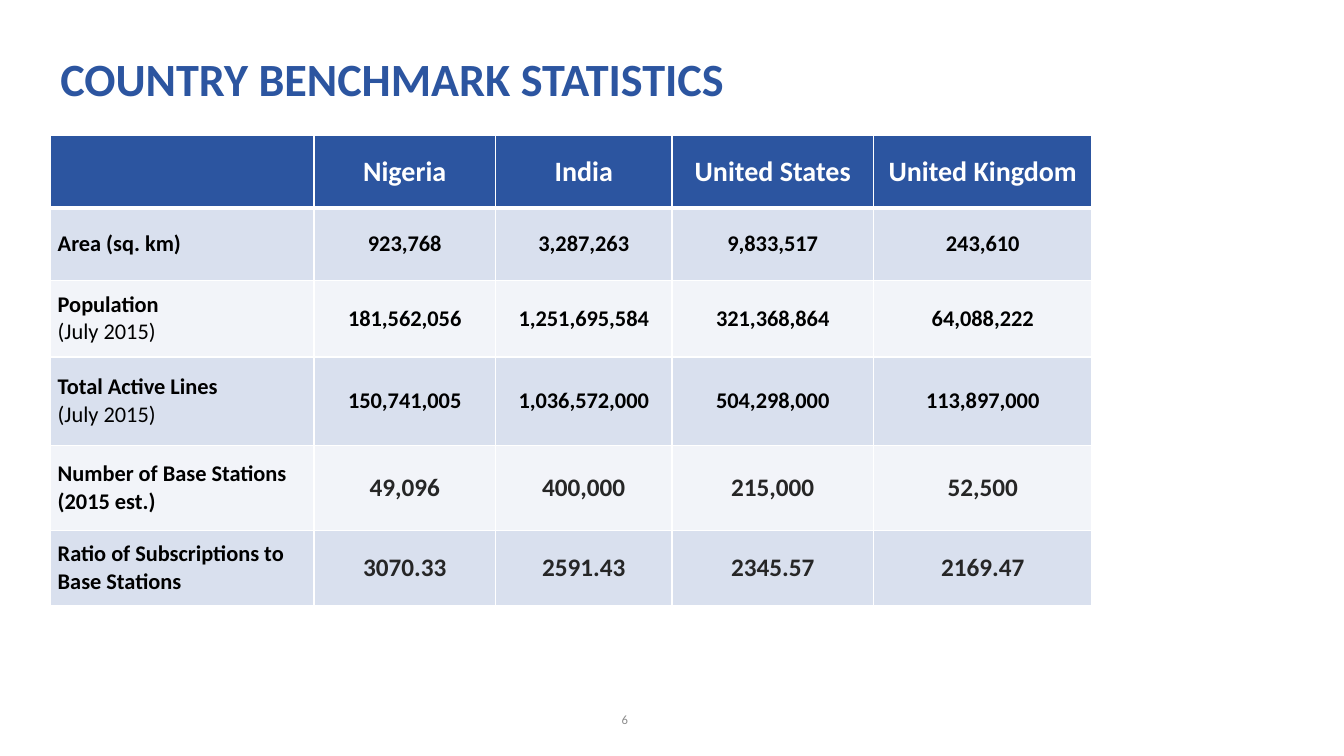
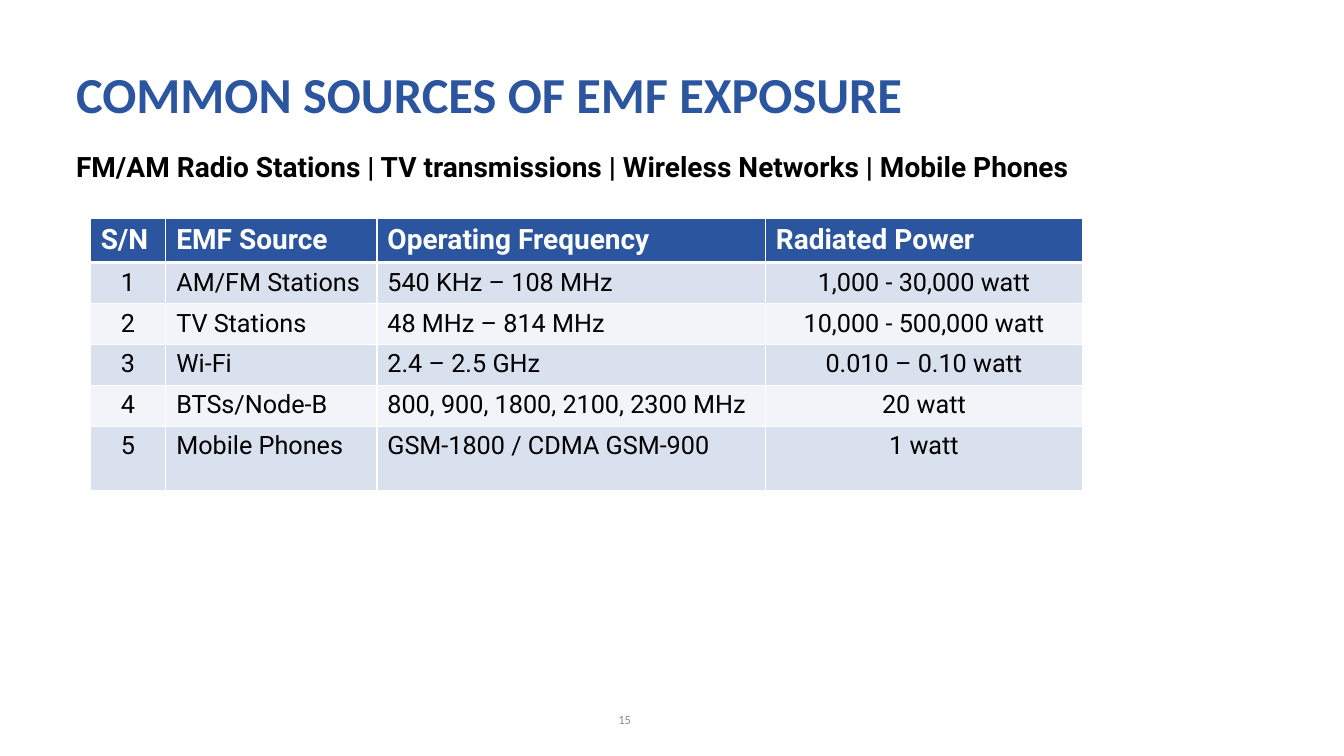
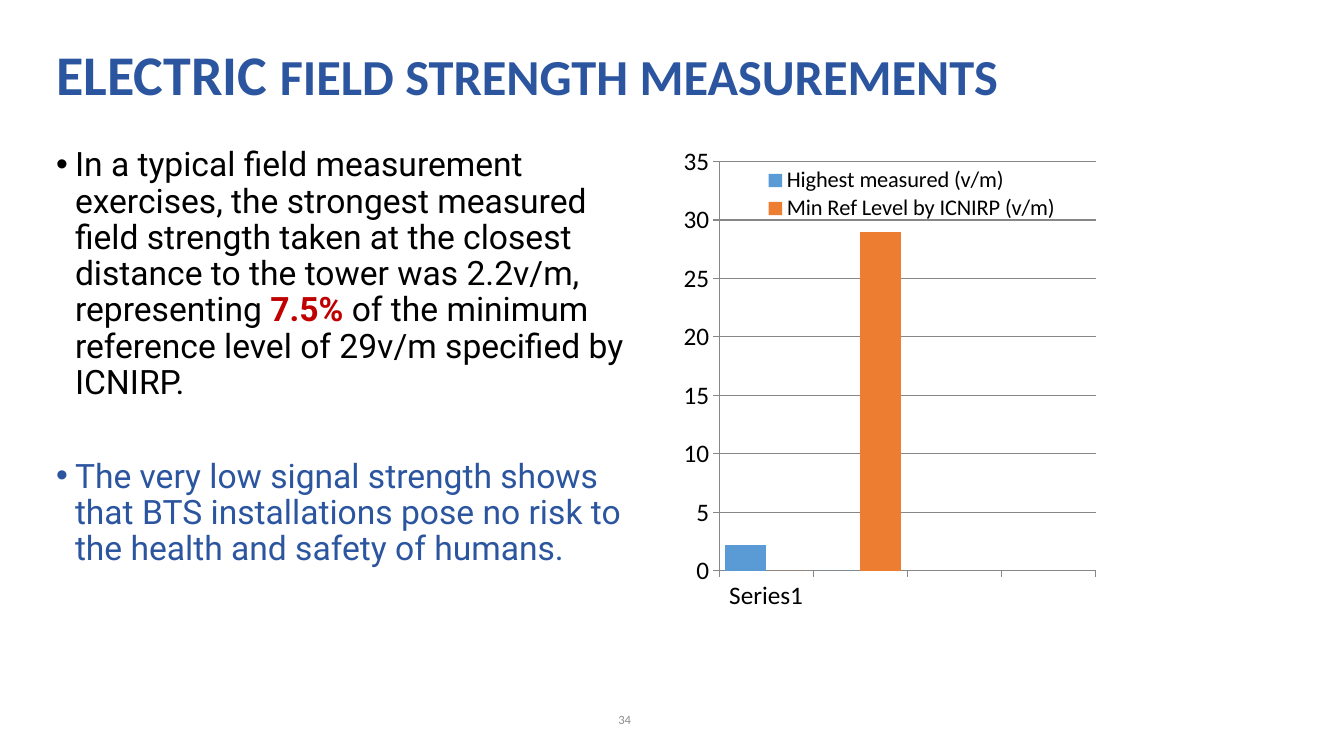
from dataclasses import dataclass
from typing import Any

from lxml import etree
from pptx import Presentation
from pptx import util as u
from pptx.chart.data import CategoryChartData
from pptx.dml.color import RGBColor
from pptx.enum import chart as chart_enum
from pptx.enum import text
from pptx.oxml import parse_xml
from pptx.oxml.ns import nsdecls, qn

EMU_PER_PX = 9525
COLOURS = {
    "blue": "2C55A0", "white": "FFFFFF", "black": "000000", "ink": "262626",
    "grey": "8C8C8C", "red": "C00000", "band": "D9E0EE", "pale": "F2F4F9",
    "grid": "878787", "measured": "5B9BD5", "limit": "ED7D31",
}
STYLES: dict[str, dict[str, Any]] = {
    "title": {"name": "Calibri", "size": 36, "bold": True, "color": "blue"},
    "number": {"name": "Calibri", "size": 9, "color": "grey"},
    "lead": {"name": "Roboto", "size": 20, "bold": True, "color": "black"},
    "body": {"name": "Roboto", "size": 24, "color": "black"},
    "country": {"name": "Calibri", "size": 20, "bold": True, "color": "white"},
    "fact": {"name": "Calibri", "size": 16, "bold": True, "color": "black"},
    "estimate": {"name": "Calibri", "size": 18, "bold": True, "color": "ink"},
    "heading": {"name": "Roboto", "size": 20, "bold": True, "color": "white"},
    "entry": {"name": "Roboto", "size": 18, "color": "black"},
    "axis": {"name": "Calibri", "size": 18, "color": "black"},
    "legend": {"name": "Calibri", "size": 16, "color": "black"},
}
STYLES["title_small"] = STYLES["title"] | {"size": 33}
STYLES["title_large"] = STYLES["title"] | {"size": 40}
STYLES["note"] = STYLES["fact"] | {"bold": False}
STYLES["stress"] = STYLES["body"] | {"bold": True, "color": "red"}
STYLES["finding"] = STYLES["body"] | {"color": "blue"}

LEFT, CENTRE = text.PP_ALIGN.LEFT, text.PP_ALIGN.CENTER
TOP, MIDDLE = text.MSO_ANCHOR.TOP, text.MSO_ANCHOR.MIDDLE


@dataclass(frozen=True)
class Area:
    left: int
    top: int
    width: int
    height: int

    def emu(self) -> tuple[int, ...]:
        return tuple(px(n) for n in (self.left, self.top, self.width, self.height))


@dataclass(frozen=True)
class Span:
    words: str
    style: str


@dataclass(frozen=True)
class Para:
    spans: tuple[Span, ...]
    align: Any = LEFT
    spacing: float = 1.0
    before: float = 0
    bullet: bool = False


@dataclass(frozen=True)
class Grid:
    left: int
    top: int
    columns: tuple[int, ...]
    rows: tuple[int, ...]
    centred: tuple[int, ...]
    margins: tuple[int, int]
    anchor: Any


NUMBER_AREA = Area(451, 666, 288, 38)
BULLET_INDENT = 18


def px(length: int) -> int:
    return u.Emu(length * EMU_PER_PX)


def colour(name: str) -> RGBColor:
    return RGBColor.from_string(COLOURS[name])


def set_font(font: Any, style: str) -> None:
    for key, value in STYLES[style].items():
        if key == "color":
            font.color.rgb = colour(value)
        else:
            setattr(font, key, u.Pt(value) if key == "size" else value)


def write(frame: Any, paras: list[Para]) -> None:
    for index, item in enumerate(paras):
        para = frame.paragraphs[0] if index == 0 else frame.add_paragraph()
        para.alignment = item.align
        para.line_spacing = item.spacing
        if item.before:
            para.space_before = u.Pt(item.before)
        if item.bullet:
            properties = para._p.get_or_add_pPr()
            properties.set("marL", str(px(BULLET_INDENT)))
            properties.set("indent", str(-px(BULLET_INDENT)))
            etree.SubElement(properties, qn("a:buFont"), typeface="Arial")
            etree.SubElement(properties, qn("a:buChar"), char="•")
        for span in item.spans:
            run = para.add_run()
            run.text = span.words
            set_font(run.font, span.style)


def add_text(page: Any, area: Area, paras: list[Para], anchor: Any = TOP) -> None:
    frame = page.shapes.add_textbox(*area.emu()).text_frame
    frame.word_wrap = True
    frame.vertical_anchor = anchor
    write(frame, paras)


def add_page(deck: Any, number: int, title_area: Area, *title: Span) -> Any:
    """Add a slide with the shared title and slide number."""
    page = deck.slides.add_slide(deck.slide_layouts[6])
    add_text(page, title_area, [Para(title, spacing=0.9)], MIDDLE)
    add_text(page, NUMBER_AREA, [Para((Span(str(number), "number"),), CENTRE)], MIDDLE)
    return page


def set_borders(cell: Any, widths: dict[str, int]) -> None:
    """Draw white cell borders; must run before the cell is filled."""
    properties = cell._tc.get_or_add_tcPr()
    for side, points in widths.items():
        line = etree.SubElement(properties, qn(f"a:ln{side}"), w=str(u.Pt(points)))
        fill = etree.SubElement(line, qn("a:solidFill"))
        etree.SubElement(fill, qn("a:srgbClr"), val=COLOURS["white"])


def add_grid(page: Any, grid: Grid, cells: list[list[list[Span]]]) -> None:
    """Add a banded table; each span of a cell is a paragraph."""
    area = Area(grid.left, grid.top, sum(grid.columns), sum(grid.rows))
    table = page.shapes.add_table(len(grid.rows), len(grid.columns), *area.emu()).table
    for column, width in zip(table.columns, grid.columns):
        column.width = px(width)
    for row, height in zip(table.rows, grid.rows):
        row.height = px(height)
    across, down = (px(margin) for margin in grid.margins)
    for r, row_cells in enumerate(cells):
        for c, spans in enumerate(row_cells):
            cell = table.cell(r, c)
            cell.margin_left = cell.margin_right = across
            cell.margin_top = cell.margin_bottom = down
            cell.vertical_anchor = grid.anchor
            set_borders(cell, {"L": 1, "R": 1, "T": 3 if r == 1 else 1, "B": 1 if r else 3})
            cell.fill.solid()
            cell.fill.fore_color.rgb = colour(("band" if r % 2 else "pale") if r else "blue")
            align = CENTRE if c in grid.centred and (r or grid.anchor == MIDDLE) else LEFT
            write(cell.text_frame, [Para((span,), align) for span in spans])


def set_layout(parent: Any, index: int, place: dict[str, float], inner: bool = False) -> None:
    """Place a chart part by fractions of the chart area."""
    for old in parent.findall(qn("c:layout")):
        parent.remove(old)
    target = '<c:layoutTarget val="inner"/>' if inner else ""
    modes = "".join(f'<c:{axis}Mode val="edge"/>' for axis in "xy")
    sizes = "".join(f'<c:{key} val="{value}"/>' for key, value in place.items())
    parent.insert(index, parse_xml(
        f"<c:layout {nsdecls('c')}><c:manualLayout>{target}{modes}{sizes}"
        "</c:manualLayout></c:layout>"))


def add_strength_chart(page: Any, area: Area) -> None:
    data = CategoryChartData()
    data.categories = ["Series1", "", "", ""]
    data.add_series("Highest measured (v/m)", (2.2, 0, None, None))
    data.add_series("Min Ref Level by ICNIRP (v/m)", (0, 29, None, None))
    kind = chart_enum.XL_CHART_TYPE.COLUMN_CLUSTERED
    chart = page.shapes.add_chart(kind, *area.emu(), data).chart
    set_font(chart.font, "axis")
    chart.has_title = False

    plot = chart.plots[0]
    plot.gap_width = 30
    plot.overlap = 0
    plot.vary_by_categories = False
    for series, name in zip(plot.series, ("measured", "limit")):
        series.format.fill.solid()
        series.format.fill.fore_color.rgb = colour(name)

    values = chart.value_axis
    values.minimum_scale, values.maximum_scale, values.major_unit = 0, 35, 5
    values.has_major_gridlines = True
    for axis in (chart.category_axis, values):
        axis.major_tick_mark = chart_enum.XL_TICK_MARK.OUTSIDE
        axis.minor_tick_mark = chart_enum.XL_TICK_MARK.NONE
    for part in (chart.category_axis, values, values.major_gridlines):
        part.format.line.color.rgb = colour("grid")
        part.format.line.width = u.Pt(0.75)

    chart.has_legend = True
    chart.legend.position = chart_enum.XL_LEGEND_POSITION.RIGHT
    chart.legend.include_in_layout = True
    set_font(chart.legend.font, "legend")
    root = chart.element
    set_layout(root.find(".//" + qn("c:plotArea")), 0,
               {"x": 0.11, "y": 0.04, "w": 0.86, "h": 0.87}, inner=True)
    set_layout(root.find(".//" + qn("c:legend")), 1,
               {"x": 0.21, "y": 0.05, "w": 0.68, "h": 0.12})


def add_benchmarks(deck: Any) -> None:
    page = add_page(deck, 6, Area(48, 44, 740, 68),
                    Span("COUNTRY BENCHMARK STATISTICS", "title_small"))
    countries = ("Nigeria", "India", "United States", "United Kingdom")
    july = Span("(July 2015)", "note")
    facts = [
        ([Span("Area (sq. km)", "fact")], "fact",
         ("923,768", "3,287,263", "9,833,517", "243,610")),
        ([Span("Population", "fact"), july], "fact",
         ("181,562,056", "1,251,695,584", "321,368,864", "64,088,222")),
        ([Span("Total Active Lines", "fact"), july], "fact",
         ("150,741,005", "1,036,572,000", "504,298,000", "113,897,000")),
        ([Span("Number of Base Stations", "fact"), Span("(2015 est.)", "fact")], "estimate",
         ("49,096", "400,000", "215,000", "52,500")),
        ([Span("Ratio of Subscriptions to Base Stations", "fact")], "estimate",
         ("3070.33", "2591.43", "2345.57", "2169.47")),
    ]
    cells = [[[]] + [[Span(country, "country")] for country in countries]]
    cells += [[label] + [[Span(value, style)] for value in values]
              for label, style, values in facts]
    grid = Grid(48, 129, (251, 173, 168, 192, 208), (69, 69, 73, 84, 81, 72),
                (1, 2, 3, 4), (7, 4), MIDDLE)
    add_grid(page, grid, cells)


def add_sources(deck: Any) -> None:
    page = add_page(deck, 15, Area(63, 45, 920, 96),
                    Span("COMMON SOURCES OF EMF EXPOSURE", "title"))
    lead = "FM/AM Radio Stations | TV transmissions | Wireless Networks | Mobile Phones"
    add_text(page, Area(63, 141, 1032, 475), [Para((Span(lead, "lead"),), spacing=0.9)])
    headings = ("S/N", "EMF Source", "Operating Frequency", "Radiated Power")
    sources = [
        ("AM/FM Stations", "540 KHz – 108 MHz", "1,000 - 30,000 watt"),
        ("TV Stations", "48 MHz – 814 MHz", "10,000 - 500,000 watt"),
        ("Wi-Fi", "2.4 – 2.5 GHz", "0.010 – 0.10 watt"),
        ("BTSs/Node-B", "800, 900, 1800, 2100, 2300 MHz", "20 watt"),
        ("Mobile Phones", "GSM-1800 / CDMA GSM-900", "1 watt"),
    ]
    cells = [[[Span(heading, "heading")] for heading in headings]]
    cells += [[[Span(entry, "entry")] for entry in (str(number), *source)]
              for number, source in enumerate(sources, 1)]
    grid = Grid(86, 208, (72, 201, 370, 302), (40, 39, 39, 39, 39, 61),
                (0, 3), (10, 5), TOP)
    add_grid(page, grid, cells)


def add_measurements(deck: Any) -> None:
    page = add_page(deck, 34, Area(44, 14, 1028, 120),
                    Span("ELECTRIC ", "title_large"),
                    Span("FIELD STRENGTH MEASUREMENTS", "title"))
    measured = (
        Span("In a typical field measurement exercises, the strongest measured field "
             "strength taken at the closest distance to the tower was 2.2v/m, "
             "representing ", "body"),
        Span("7.5% ", "stress"),
        Span("of the minimum reference level of 29v/m specified by ICNIRP.", "body"),
    )
    finding = Span("The very low signal strength shows that BTS installations pose "
                   "no risk to the health and safety of humans.", "finding")
    add_text(page, Area(44, 136, 564, 448), [
        Para(measured, spacing=0.9, bullet=True),
        Para((finding,), spacing=0.9, before=41, bullet=True),
    ])
    add_strength_chart(page, Area(639, 136, 417, 448))


def main() -> None:
    deck = Presentation()
    deck.slide_width, deck.slide_height = px(1280), px(720)
    add_benchmarks(deck)
    add_sources(deck)
    add_measurements(deck)
    deck.save("out.pptx")


if __name__ == "__main__":
    main()
